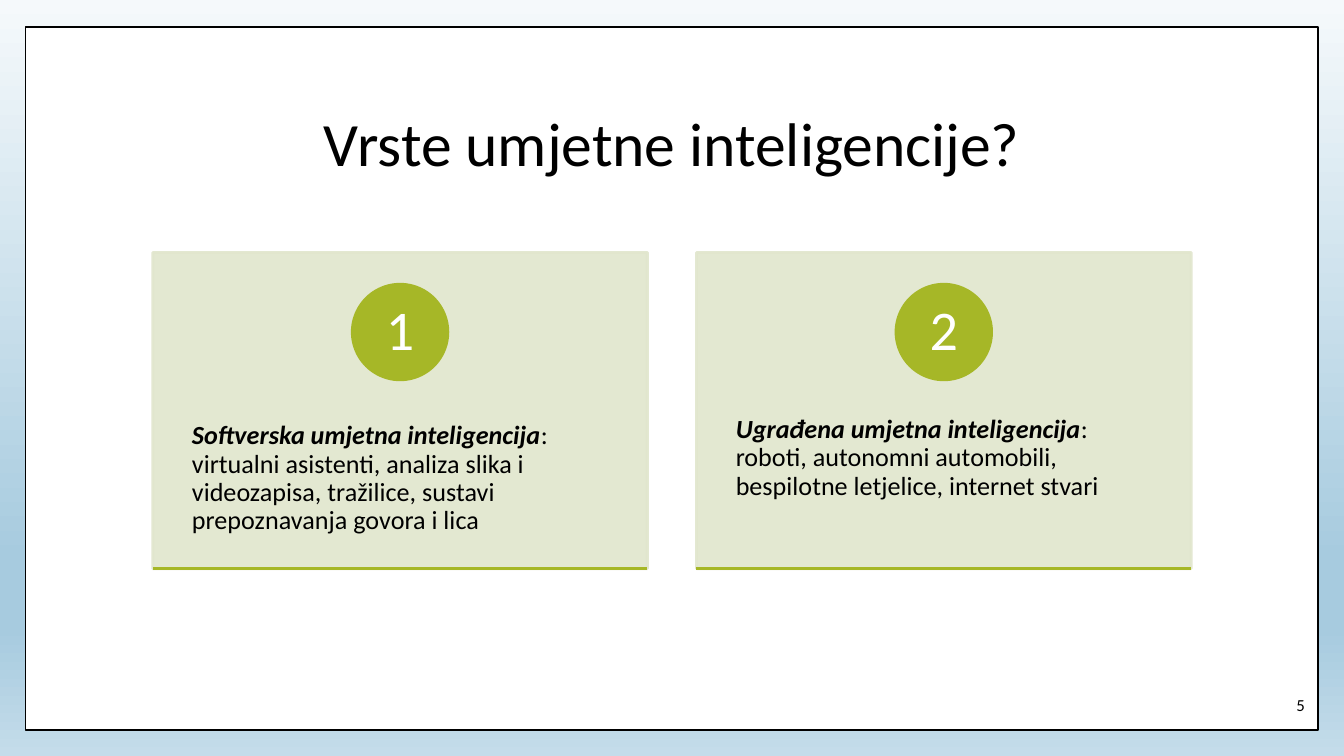
from copy import deepcopy
from lxml.etree import SubElement
from pptx import Presentation
from pptx.dml.color import RGBColor as RGB
from pptx.enum.shapes import MSO_CONNECTOR as CONN, MSO_SHAPE as SHAPE
from pptx.enum.text import MSO_ANCHOR as ANCHOR, PP_ALIGN as ALIGN
from pptx.oxml.ns import qn
from pptx.util import Pt

TITLE = "Vrste umjetne inteligencije?"
PAGE = "5"
CARDS = [
    ("Softverska umjetna inteligencija",
     ": virtualni asistenti, analiza slika i videozapisa, tražilice, "
     "sustavi prepoznavanja govora i lica"),
    ("Ugrađena umjetna inteligencija",
     ": roboti, autonomni automobili, bespilotne letjelice, internet stvari"),
]
COLORS = {"black": "000000", "white": "FFFFFF", "card": "E1E6CD", "accent": "A6B727"}
GRADIENT = [(0, "F5F9FB"), (74, "A7CBDF"), (83, "A7CBDF"), (100, "C4DCEA")]
FONT = "Calibri"
WIDTH, HEIGHT = 720, 405
CARD_W, CARD_H, CARD_TOP, GAP = 265, 169.4, 135.3, 26.3
CIRCLE, CIRCLE_TOP = 51.2, 152.3
BODY_TOP, BODY_H = 200.2, 101.5
LEFT = (WIDTH - len(CARDS) * CARD_W - (len(CARDS) - 1) * GAP) / 2


def color(name):
    return RGB.from_string(COLORS[name])


def set_background(s):
    fill = s.background.fill
    fill.gradient()
    fill.gradient_angle = 270
    stops = s.element.find(".//" + qn("a:gsLst"))
    template = deepcopy(stops[0])
    for stop in list(stops):
        stops.remove(stop)
    for _ in GRADIENT:
        stops.append(deepcopy(template))
    for stop, (pos, value) in zip(fill.gradient_stops, GRADIENT):
        stop.position = pos / 100
        stop.color.rgb = RGB.from_string(value)


def add_box(s, kind, box, fill, line, width, alpha=None):
    sp = s.shapes.add_shape(kind, *map(Pt, box))
    sp.shadow.inherit = False
    sp.fill.solid()
    sp.fill.fore_color.rgb = color(fill)
    sp.line.color.rgb = color(line)
    sp.line.width = Pt(width)
    if alpha:
        for clr in sp.element.spPr.iter(qn("a:srgbClr")):
            SubElement(clr, qn("a:alpha"), val=str(alpha * 1000))
    return sp


def write(sp, runs, size, name="black", align=ALIGN.LEFT, anchor=ANCHOR.TOP,
          inset=(0, 0), spacing=None):
    tf = sp.text_frame
    tf.word_wrap = True
    tf.vertical_anchor = anchor
    tf.margin_left = tf.margin_right = Pt(inset[0])
    tf.margin_top = tf.margin_bottom = Pt(inset[1])
    p = tf.paragraphs[0]
    p.alignment = align
    p.line_spacing = spacing
    for text, strong in runs:
        r = p.add_run()
        r.text = text
        r.font.name = FONT
        r.font.size = Pt(size)
        r.font.bold = r.font.italic = strong
        r.font.color.rgb = color(name)


def add_text(s, box, runs, size, **style):
    write(s.shapes.add_textbox(*map(Pt, box)), runs, size, **style)


def add_card(s, i, term, examples):
    x = LEFT + i * (CARD_W + GAP)
    bottom = CARD_TOP + CARD_H
    add_box(s, SHAPE.RECTANGLE, (x, CARD_TOP, CARD_W, CARD_H), "card", "card", 1.5, 90)
    add_text(s, (x, BODY_TOP, CARD_W, BODY_H), [(term, True), (examples, False)], 14,
             inset=(21, 26), spacing=0.9)
    circle = add_box(s, SHAPE.OVAL, (x + (CARD_W - CIRCLE) / 2, CIRCLE_TOP, CIRCLE, CIRCLE),
                     "accent", "accent", 1.5)
    write(circle, [(str(i + 1), False)], 30, "white", ALIGN.CENTER, ANCHOR.MIDDLE, spacing=0.9)
    rule = s.shapes.add_connector(CONN.STRAIGHT, Pt(x), Pt(bottom), Pt(x + CARD_W), Pt(bottom))
    rule.line.color.rgb = color("accent")
    rule.line.width = Pt(1.5)
    SubElement(rule.element.spPr, qn("a:effectLst"))


def main():
    prs = Presentation()
    prs.slide_width, prs.slide_height = Pt(WIDTH), Pt(HEIGHT)
    s = prs.slides.add_slide(prs.slide_layouts[6])
    set_background(s)
    add_box(s, SHAPE.RECTANGLE, (13.7, 14.4, 692.5, 376.7), "white", "black", 1)
    add_text(s, (LEFT, 65.5, WIDTH - 2 * LEFT, 31), [(TITLE, False)], 33,
             align=ALIGN.CENTER, anchor=ANCHOR.BOTTOM, spacing=0.9)
    add_text(s, (656, 362.2, 43, 31), [(PAGE, False)], 9,
             align=ALIGN.RIGHT, anchor=ANCHOR.MIDDLE)
    for i, card in enumerate(CARDS):
        add_card(s, i, *card)
    prs.save("out.pptx")


if __name__ == "__main__":
    main()
